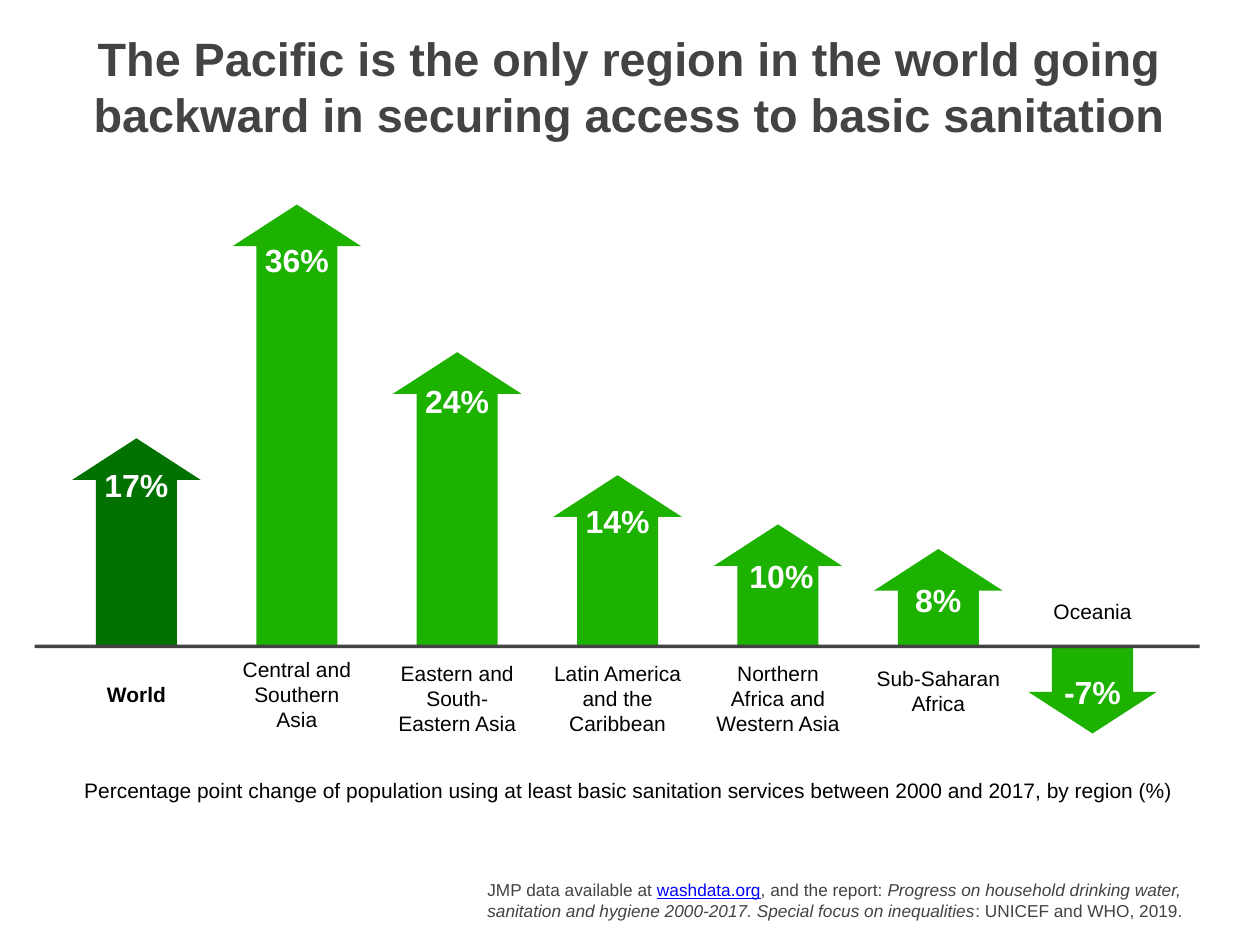
from dataclasses import dataclass

from pptx import Presentation
from pptx.dml.color import RGBColor
from pptx.enum.shapes import MSO_SHAPE
from pptx.enum.text import MSO_ANCHOR, PP_ALIGN
from pptx.shapes.autoshape import Shape
from pptx.slide import Slide
from pptx.text.text import TextFrame
from pptx.util import Inches, Pt


@dataclass(frozen=True)
class Theme:
    font: str = "Arial"
    title_size: int = 38
    value_size: int = 26
    label_size: int = 17
    source_size: int = 14
    grey: str = "434343"
    green: str = "1DB100"
    dark_green: str = "017100"
    black: str = "000000"
    white: str = "FFFFFF"
    link: str = "0000FF"


THEME = Theme()


@dataclass(frozen=True)
class Run:
    text: str
    size: int
    color: str = THEME.black
    bold: bool = False
    italic: bool = False
    underline: bool = False


@dataclass(frozen=True)
class Box:
    left: float
    top: float
    width: float
    height: float


@dataclass(frozen=True)
class Region:
    name: str
    change: int
    value_top: float
    label_top: float
    label_height: float
    label_width: float = 1.45
    color: str = THEME.green
    bold: bool = False
    shift: float = 0
    value_shift: float = 0


REGIONS = [
    Region("World", 17, 5.2, 7.64, 0.4, color=THEME.dark_green, bold=True),
    Region("Central and Southern Asia", 36, 2.66, 7.37, 0.94),
    Region("Eastern and South-Eastern Asia", 24, 4.25, 7.41, 0.94),
    Region("Latin America and the Caribbean", 14, 5.6, 7.41, 0.94, 1.61),
    Region("Northern Africa and Western Asia", 10, 6.23, 7.41, 0.94, 1.61, value_shift=0.04),
    Region("Sub-Saharan Africa", 8, 6.5, 7.47, 0.66, 1.61),
    Region("Oceania", -7, 7.53, 6.71, 0.38, shift=-0.07),
]
FIRST_CENTER, PITCH = 1.54, 1.81
BASELINE = 7.31
INCHES_PER_POINT = 5 / 36
ARROW_WIDTH, HEAD_LENGTH, SHAFT_RATIO = 1.45, 0.47, 0.631
VALUE_WIDTH, VALUE_HEIGHT = 0.89, 0.55


def place(sp: Shape, box: Box) -> None:
    sp.left, sp.top = Inches(box.left), Inches(box.top)
    sp.width, sp.height = Inches(box.width), Inches(box.height)


def write(tf: TextFrame, runs: list[Run], align: PP_ALIGN, wrap: bool = True) -> None:
    tf.word_wrap = wrap
    tf.vertical_anchor = MSO_ANCHOR.MIDDLE
    tf.margin_left = tf.margin_right = tf.margin_top = tf.margin_bottom = Inches(0.06)
    p = tf.paragraphs[0]
    p.alignment = align
    for run in runs:
        r = p.add_run()
        r.text = run.text
        r.font.name, r.font.size = THEME.font, Pt(run.size)
        r.font.bold, r.font.italic, r.font.underline = run.bold, run.italic, run.underline
        r.font.color.rgb = RGBColor.from_string(run.color)


def add_text(s: Slide, box: Box, runs: list[Run], align: PP_ALIGN = PP_ALIGN.CENTER,
             wrap: bool = True) -> None:
    sp = s.shapes.add_textbox(0, 0, 0, 0)
    place(sp, box)
    write(sp.text_frame, runs, align, wrap)


def add_filled(s: Slide, kind: MSO_SHAPE, box: Box, color: str) -> Shape:
    sp = s.shapes.add_shape(kind, 0, 0, 0, 0)
    place(sp, box)
    sp.shadow.inherit = False
    sp.fill.solid()
    sp.fill.fore_color.rgb = RGBColor.from_string(color)
    sp.line.fill.background()
    return sp


def add_region(s: Slide, region: Region, center: float) -> None:
    """Draw the arrow scaled to the change, its value and the region's name."""
    rising = region.change > 0
    height = abs(region.change) * INCHES_PER_POINT
    kind = MSO_SHAPE.UP_ARROW if rising else MSO_SHAPE.DOWN_ARROW
    top = BASELINE - height if rising else BASELINE
    arrow = add_filled(s, kind, Box(center - ARROW_WIDTH / 2, top, ARROW_WIDTH, height),
                       region.color)
    arrow.adjustments[0] = SHAFT_RATIO
    arrow.adjustments[1] = HEAD_LENGTH / min(ARROW_WIDTH, height)

    value_left = center + region.value_shift - VALUE_WIDTH / 2
    add_text(s, Box(value_left, region.value_top, VALUE_WIDTH, VALUE_HEIGHT),
             [Run(f"{region.change}%", THEME.value_size, THEME.white, bold=True)], wrap=False)
    add_text(s, Box(center - region.label_width / 2, region.label_top,
                    region.label_width, region.label_height),
             [Run(region.name, THEME.label_size, bold=region.bold)])


def main() -> None:
    prs = Presentation()
    prs.slide_width, prs.slide_height = Inches(14.22), Inches(10.67)
    s = prs.slides.add_slide(prs.slide_layouts[5])

    title = s.shapes.title
    place(title, Box(0.27, 0.28, 13.67, 1.37))
    write(title.text_frame,
          [Run("The Pacific is the only region in the world going backward in securing "
               "access to basic sanitation", THEME.title_size, THEME.grey, bold=True)],
          PP_ALIGN.CENTER)

    for i, region in enumerate(REGIONS):
        add_region(s, region, FIRST_CENTER + i * PITCH + region.shift)
    add_filled(s, MSO_SHAPE.RECTANGLE, Box(0.39, 7.28, 13.15, 0.04), THEME.grey)

    add_text(s, Box(0.89, 8.73, 12.59, 0.38),
             [Run("Percentage point change of population using at least basic sanitation "
                  "services between 2000 and 2017, by region (%)", THEME.label_size)],
             PP_ALIGN.LEFT)
    size = THEME.source_size
    add_text(s, Box(5.44, 9.89, 8.27, 0.55), [
        Run("JMP data available at ", size, THEME.grey),
        Run("washdata.org", size, THEME.link, underline=True),
        Run(", and the report: ", size, THEME.grey),
        Run("Progress on household drinking water, sanitation and hygiene 2000-2017. "
            "Special focus on inequalities", size, THEME.grey, italic=True),
        Run(": UNICEF and WHO, 2019.", size, THEME.grey),
    ], PP_ALIGN.LEFT)
    prs.save("out.pptx")


if __name__ == "__main__":
    main()
